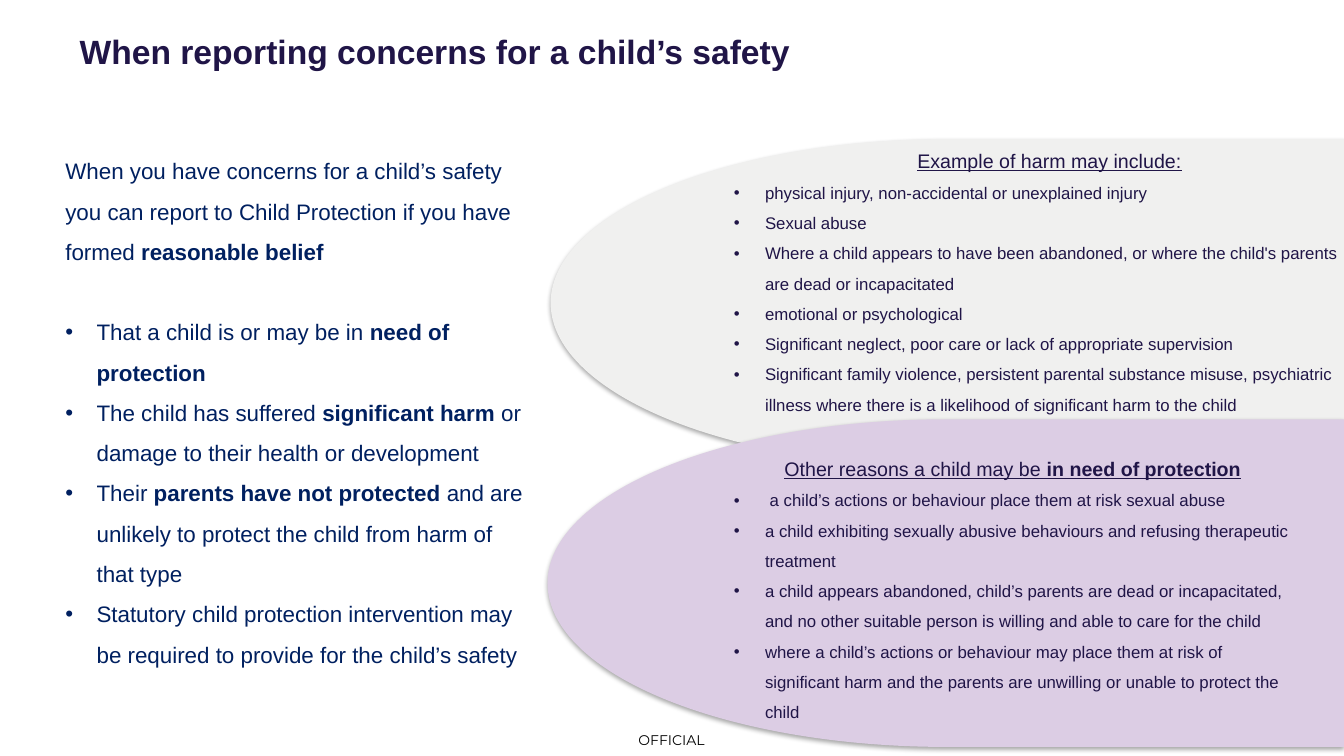
from dataclasses import dataclass

from lxml import etree
from pptx import Presentation
from pptx.dml.color import RGBColor
from pptx.enum import shapes, text
from pptx.oxml import ns
from pptx.util import Inches, Pt

NAVY, BLUE, BLACK = "201547", "002060", "000000"
INDENT = Inches(0.31)


@dataclass
class Line:
    """A paragraph; ** switches bold on and off."""
    words: str
    size: float
    color: str = NAVY
    bullet: bool = False
    spacing: float = 1.5
    before: float = 0
    centred: bool = False
    underline: bool = False
    font: str = "Arial"


@dataclass
class Panel:
    shape_box: tuple[float, float, float, float]
    fill: str
    text_box: tuple[float, float, float, float]
    heading: str
    points: list[str]


INTRO = ("When you have concerns for a child’s safety you can report to Child Protection "
         "if you have formed **reasonable belief**")
BELIEFS = [
    "That a child is or may be in **need of protection**",
    "The child has suffered **significant harm **or damage to their health or development",
    "Their **parents have not protected **and are unlikely to protect the child from harm of that type",
    "Statutory child protection intervention may be required to provide for the child’s safety",
]
PANELS = [
    Panel((5.46, 1.38, 7.88, 3.25), "F0F0EF", (7.18, 1.43, 6.46, 2.72),
          "Example of harm may include:", [
              "physical injury, non-accidental or unexplained injury",
              "Sexual abuse",
              "Where a child appears to have been abandoned, or where the child's parents "
              "are dead or incapacitated",
              "emotional or psychological",
              "Significant neglect, poor care or lack of appropriate supervision",
              "Significant family violence, persistent parental substance misuse, psychiatric "
              "illness where there is a likelihood of significant harm to the child",
          ]),
    Panel((5.43, 4.16, 7.9, 3.25), "DCCDE4", (7.18, 4.48, 5.73, 2.72),
          "Other reasons a child may be **in need of protection**", [
              " a child’s actions or behaviour place them at risk sexual abuse",
              "a child exhibiting sexually abusive behaviours and refusing therapeutic treatment",
              "a child appears abandoned, child’s parents are dead or incapacitated, and no other "
              "suitable person is willing and able to care for the child",
              "where a child’s actions or behaviour may place them at risk of significant harm "
              "and the parents are unwilling or unable to protect the child",
          ]),
]


def rgb(color: str) -> RGBColor:
    return RGBColor.from_string(color)


def write(tf, lines: list[Line]) -> None:
    for i, line in enumerate(lines):
        p = tf.add_paragraph() if i else tf.paragraphs[0]
        if line.bullet:
            pPr = p._p.get_or_add_pPr()
            pPr.set("marL", str(INDENT))
            pPr.set("indent", str(-INDENT))
            etree.SubElement(pPr, ns.qn("a:buFont"), typeface="Arial")
            etree.SubElement(pPr, ns.qn("a:buChar"), char="•")
        p.alignment = text.PP_ALIGN.CENTER if line.centred else text.PP_ALIGN.LEFT
        p.line_spacing = line.spacing
        if line.before:
            p.space_before = Pt(line.before)
        for n, part in enumerate(line.words.split("**")):
            if not part:
                continue
            r = p.add_run()
            r.text = part
            r.font.name = line.font
            r.font.size = Pt(line.size)
            r.font.bold = n % 2 == 1
            r.font.underline = line.underline
            r.font.color.rgb = rgb(line.color)


def remove_margins(tf) -> None:
    tf.margin_left = tf.margin_right = tf.margin_top = tf.margin_bottom = 0
    tf.vertical_anchor = text.MSO_ANCHOR.MIDDLE


def add_text(slide, box: tuple[float, float, float, float], lines: list[Line]):
    tf = slide.shapes.add_textbox(*map(Inches, box)).text_frame
    tf.word_wrap = True
    tf.auto_size = text.MSO_AUTO_SIZE.SHAPE_TO_FIT_TEXT
    write(tf, lines)
    return tf


def add_title(slide, words: str) -> None:
    s = slide.shapes.title
    s.left, s.top, s.width, s.height = map(Inches, (0.79, 0, 9.45, 0.98))
    tf = s.text_frame
    tf.auto_size = text.MSO_AUTO_SIZE.NONE
    remove_margins(tf)
    write(tf, [Line(f"**{words}**", 24, spacing=1.1)])


def add_panel_shape(slide, panel: Panel) -> None:
    s = slide.shapes.add_shape(shapes.MSO_SHAPE.FLOWCHART_DELAY, *map(Inches, panel.shape_box))
    s.rotation = 180
    s.fill.solid()
    s.fill.fore_color.rgb = rgb(panel.fill)
    s.line.fill.background()
    s.shadow.inherit = False
    effects = s._element.spPr.find(ns.qn("a:effectLst"))
    shadow = etree.SubElement(effects, ns.qn("a:outerShdw"), blurRad=str(Pt(3.1)),
                              dist=str(Pt(1.8)), dir="5400000", rotWithShape="0")
    color = etree.SubElement(shadow, ns.qn("a:srgbClr"), val=BLACK)
    etree.SubElement(color, ns.qn("a:alpha"), val="35000")


def main() -> None:
    prs = Presentation()
    prs.slide_width, prs.slide_height = Inches(13.33), Inches(7.5)
    slide = prs.slides.add_slide(prs.slide_layouts[5])

    add_title(slide, "When reporting concerns for a child’s safety")
    remove_margins(add_text(slide, (6.15, 7.19, 1.02, 0.31), [
        Line("OFFICIAL", 10, BLACK, spacing=1, centred=True, font="Montserrat")]))
    for panel in PANELS:
        add_panel_shape(slide, panel)
    for panel in PANELS:
        heading = Line(panel.heading, 14, spacing=1, centred=True, underline=True)
        add_text(slide, panel.text_box,
                 [heading] + [Line(point, 12, bullet=True) for point in panel.points])
    beliefs = [Line(belief, 16, BLUE, bullet=True, before=0 if i else 28.7)
               for i, belief in enumerate(BELIEFS)]
    add_text(slide, (0.55, 1.38, 4.83, 5.3), [Line(INTRO, 16, BLUE)] + beliefs)

    prs.save("out.pptx")


if __name__ == "__main__":
    main()
